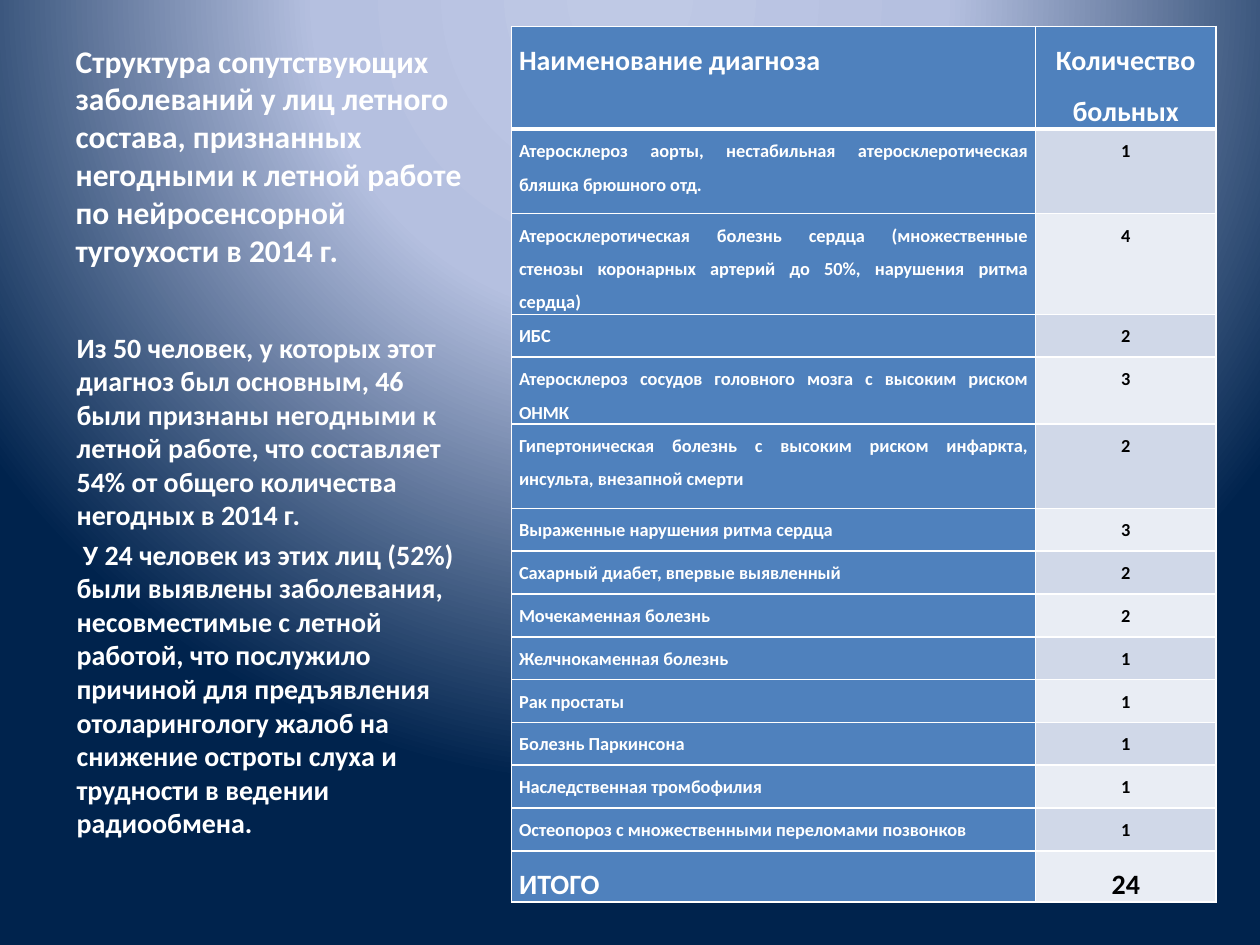
import pptx
import pptx.dml.color
import pptx.enum.text
import pptx.oxml
import pptx.oxml.ns
import pptx.util

Inches = pptx.util.Inches
Pt = pptx.util.Pt
RGB = pptx.dml.color.RGBColor
ALIGN = pptx.enum.text.PP_ALIGN
ANCHOR = pptx.enum.text.MSO_ANCHOR

WHITE = RGB(0xFF, 0xFF, 0xFF)
BLACK = RGB(0, 0, 0)
BLUE = RGB(0x4F, 0x81, 0xBD)
BANDS = [RGB(0xE9, 0xED, 0xF4), RGB(0xD0, 0xD8, 0xE8)]
GLOW = [(0, RGB(0xBF, 0xC9, 0xE5)), (40, RGB(0xB5, 0xC0, 0xE0)),
        (100, RGB(0x00, 0x23, 0x4D))]

TITLE = ("Структура сопутствующих заболеваний у лиц летного состава, "
         "признанных негодными к летной работе по нейросенсорной "
         "тугоухости в 2014 г.")
NOTES = [
    "Из 50 человек, у которых этот диагноз был основным, 46 были признаны "
    "негодными к летной работе, что составляет 54% от общего количества "
    "негодных в 2014 г.",
    " У 24 человек из этих лиц (52%) были выявлены заболевания, "
    "несовместимые с летной работой, что послужило причиной для предъявления "
    "отоларингологу жалоб на снижение остроты слуха и трудности в ведении "
    "радиообмена.",
]
# Diagnosis, number of patients, row height in inches
ROWS = [
    ("Наименование диагноза", "Количество больных", 0.53),
    ("Атеросклероз аорты, нестабильная атеросклеротическая бляшка "
     "брюшного отд.", "1", 0.67),
    ("Атеросклеротическая болезнь сердца (множественные стенозы коронарных "
     "артерий до 50%, нарушения ритма сердца)", "4", 0.8),
    ("ИБС", "2", 0.34),
    ("Атеросклероз сосудов головного мозга с высоким риском ОНМК", "3", 0.53),
    ("Гипертоническая болезнь с высоким риском инфаркта, инсульта, "
     "внезапной смерти", "2", 0.67),
    ("Выраженные нарушения ритма сердца", "3", 0.34),
    ("Сахарный диабет, впервые выявленный", "2", 0.34),
    ("Мочекаменная болезнь", "2", 0.34),
    ("Желчнокаменная болезнь", "1", 0.34),
    ("Рак простаты", "1", 0.34),
    ("Болезнь Паркинсона", "1", 0.34),
    ("Наследственная тромбофилия", "1", 0.34),
    ("Остеопороз с множественными переломами позвонков", "1", 0.34),
    ("ИТОГО", "24", 0.34),
]
COLS = [4.16, 1.43]


def assign(item, form):
    for name, value in form.items():
        setattr(item, name, value)


def write(para, text, size, color, **form):
    run = para.add_run()
    run.text = text
    assign(run.font, {"name": "Calibri", "size": Pt(size), "bold": True})
    run.font.color.rgb = color
    assign(para, form)


def place(shape, left, top, width, height):
    assign(shape, {"left": Inches(left), "top": Inches(top),
                   "width": Inches(width), "height": Inches(height)})


def paint_back(slide):
    """Fill the background with a radial glow centred above the slide."""
    stops = "".join(f'<a:gs pos="{pos * 1000}"><a:srgbClr val="{color}"/></a:gs>'
                    for pos, color in GLOW)
    back = pptx.oxml.parse_xml(
        f'<p:bg {pptx.oxml.ns.nsdecls("p", "a")}><p:bgPr>'
        f'<a:gradFill rotWithShape="1"><a:gsLst>{stops}</a:gsLst>'
        '<a:path path="circle"><a:fillToRect l="50000" t="-80000" r="50000" '
        'b="180000"/></a:path></a:gradFill><a:effectLst/></p:bgPr></p:bg>')
    slide.element.cSld.insert(0, back)


def add_title(slide):
    title = slide.shapes.title
    place(title, 0.5, 0.3, 3.29, 1.88)
    frame = title.text_frame
    assign(frame, {"word_wrap": True, "vertical_anchor": ANCHOR.BOTTOM,
                   "auto_size": pptx.enum.text.MSO_AUTO_SIZE.NONE})
    write(frame.paragraphs[0], TITLE, 18, WHITE, alignment=ALIGN.LEFT)


def add_notes(slide):
    box = slide.shapes.add_textbox(Inches(0.51), Inches(2.57),
                                   Inches(3.29), Inches(4.45))
    frame = box.text_frame
    frame.word_wrap = True
    for i, text in enumerate(NOTES):
        para = frame.add_paragraph() if i else frame.paragraphs[0]
        write(para, text, 16, WHITE, space_before=Pt(3.2))


def edge_cell(cell, **widths):
    """Draw white cell borders; widths are points keyed by side L, R, T, B."""
    props = cell._tc.get_or_add_tcPr()
    for side, width in widths.items():
        props.append(pptx.oxml.parse_xml(
            f'<a:ln{side} {pptx.oxml.ns.nsdecls("a")} w="{Pt(width)}">'
            f'<a:solidFill><a:srgbClr val="{WHITE}"/></a:solidFill>'
            f'</a:ln{side}>'))


def fill_cell(cell, text, row, col):
    head = row == 0
    plain = head or col == 0
    edge_cell(cell, L=1, R=1, T=3 if row == 1 else 1, B=3 if head else 1)
    cell.fill.solid()
    cell.fill.fore_color.rgb = BLUE if plain else BANDS[row % 2]
    assign(cell, {"margin_left": Inches(0.06), "margin_right": Inches(0.06),
                  "margin_top": 0, "margin_bottom": 0})
    write(cell.text_frame.paragraphs[0], text,
          16 if row in (0, len(ROWS) - 1) else 10.5,
          WHITE if plain else BLACK,
          alignment=ALIGN.CENTER if col else ALIGN.JUSTIFY,
          line_spacing=1.5, space_before=Pt(12))


def add_counts(slide):
    area = [4.06, 0.21, sum(COLS), 6.89]
    frame = slide.shapes.add_table(len(ROWS), len(COLS), *map(Inches, area))
    table = frame.table
    for col, width in zip(table.columns, COLS):
        col.width = Inches(width)
    for i, (name, count, height) in enumerate(ROWS):
        table.rows[i].height = Inches(height)
        for j, text in enumerate((name, count)):
            fill_cell(table.cell(i, j), text, i, j)
    place(frame, *area)


def main():
    deck = pptx.Presentation()
    assign(deck, {"slide_width": Inches(10), "slide_height": Inches(7.5)})
    slide = deck.slides.add_slide(deck.slide_layouts.get_by_name("Title Only"))
    paint_back(slide)
    add_title(slide)
    add_counts(slide)
    add_notes(slide)
    deck.save("out.pptx")


if __name__ == "__main__":
    main()
